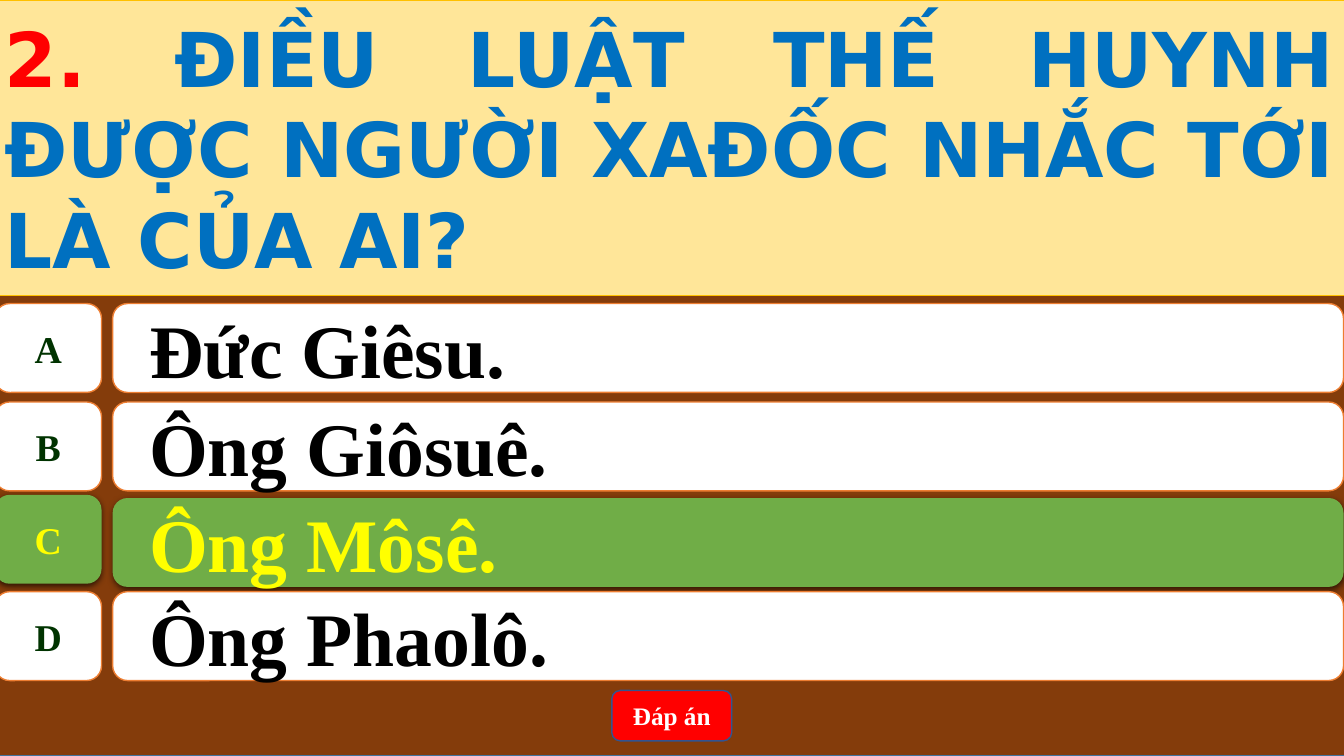
"""Build a quiz slide with a question, four answers and the correct one highlighted."""
from lxml import etree
from pptx import Presentation
from pptx.dml.color import RGBColor
from pptx.enum.shapes import MSO_SHAPE
from pptx.enum.text import MSO_ANCHOR, PP_ALIGN
from pptx.oxml.ns import qn
from pptx.util import Cm, Pt

RECT = MSO_SHAPE.RECTANGLE
ROUNDED = MSO_SHAPE.ROUNDED_RECTANGLE
LETTER_BOX = MSO_SHAPE.FLOWCHART_ALTERNATE_PROCESS
MIDDLE = MSO_ANCHOR.MIDDLE
CENTER, LEFT, JUSTIFY = PP_ALIGN.CENTER, PP_ALIGN.LEFT, PP_ALIGN.JUSTIFY

SERIF, SANS = "Times New Roman", "DejaVu Sans"
COLORS = {
    "brown": "843C0B", "frame": "43739E", "cream": "FFE699", "gold": "FFC000",
    "white": "FFFFFF", "orange": "ED7D31", "green": "70AD47", "yellow": "FFFF00",
    "dark_green": "003300", "black": "000000", "red": "FF0000", "blue": "0070C0",
    "navy": "325491",
}
EDGE, FULL_WIDTH = -0.13, 34.01
ROW_HEIGHT = 2.24
ANSWERS = [
    ("A", "Đức Giêsu.", 7.65, 7.65, False),
    ("B", "Ông Giôsuê.", 10.13, 10.13, False),
    ("C", "Ông Môsê.", 12.47, 12.55, True),
    ("D", "Ông Phaolô.", 14.91, 14.91, False),
]


def rgb(name):
    return RGBColor.from_string(COLORS[name])


def add_box(shapes, kind, box, fill, line=None, line_width=1):
    panel = shapes.add_shape(kind, *(Cm(length) for length in box))
    panel.shadow.inherit = False
    panel.fill.solid()
    panel.fill.fore_color.rgb = rgb(fill)
    if line:
        panel.line.color.rgb = rgb(line)
        panel.line.width = Pt(line_width)
    else:
        panel.line.fill.background()
    return panel


def write(panel, runs, size, font, align, wrap=True):
    frame = panel.text_frame
    frame.word_wrap = wrap
    frame.vertical_anchor = MIDDLE
    paragraph = frame.paragraphs[0]
    paragraph.alignment = align
    for text, color in runs:
        run = paragraph.add_run()
        run.text = text
        run.font.size = Pt(size)
        run.font.name = font
        run.font.bold = True
        run.font.color.rgb = rgb(color)
    return paragraph


def indent(paragraph, margin, first_line):
    paragraph.level = 1
    properties = paragraph._p.get_or_add_pPr()
    properties.set("marL", str(Cm(margin)))
    properties.set("indent", str(Cm(first_line)))


def add_shadow(panel):
    effects = panel._element.spPr.find(qn("a:effectLst"))
    shadow = etree.SubElement(
        effects, qn("a:outerShdw"), blurRad=str(Pt(4.5)), dist=str(Pt(1.5)),
        dir="5400000", algn="ctr", rotWithShape="0")
    color = etree.SubElement(shadow, qn("a:srgbClr"), val=COLORS["black"])
    etree.SubElement(color, qn("a:alpha"), val="63000")


def add_answer(slide, letter, answer, letter_top, answer_top, correct):
    row = slide.shapes.add_group_shape().shapes
    fill, line = ("green", None) if correct else ("white", "orange")
    letter_color, answer_color = ("yellow", "yellow") if correct else ("dark_green", "black")
    label = add_box(row, LETTER_BOX, (EDGE, letter_top, 2.69, ROW_HEIGHT), fill, line)
    write(label, [(letter, letter_color)], 27, SERIF, CENTER, wrap=False)
    bar = add_box(row, ROUNDED, (2.84, answer_top, 31.02, ROW_HEIGHT), fill, line)
    indent(write(bar, [(answer, answer_color)], 54, SERIF, LEFT), 1.27, -0.71)
    if correct:
        add_shadow(label)
        add_shadow(bar)


def add_question(slide, number, question):
    banner = add_box(slide.shapes, RECT, (EDGE, 0, FULL_WIDTH, 7.44), "cream", "gold", 0.5)
    write(banner, [(number, "red"), (question, "blue")], 54, SANS, JUSTIFY)


def add_button(slide, caption):
    button = add_box(slide.shapes, ROUNDED, (15.42, 17.4, 3.02, 1.27), "red", "navy")
    write(button, [(caption, "white")], 18, SERIF, CENTER)


def main():
    deck = Presentation()
    deck.slide_width, deck.slide_height = Cm(33.87), Cm(19.05)
    slide = deck.slides.add_slide(deck.slide_layouts[6])
    add_box(slide.shapes, RECT, (EDGE, 0, FULL_WIDTH, 19.05), "brown", "frame")
    add_button(slide, "Đáp án")
    for answer in ANSWERS:
        add_answer(slide, *answer)
    add_question(slide, "2. ", "ĐIỀU LUẬT THẾ HUYNH ĐƯỢC NGƯỜI XAĐỐC NHẮC TỚI LÀ CỦA AI?")
    deck.save("out.pptx")


if __name__ == "__main__":
    main()
